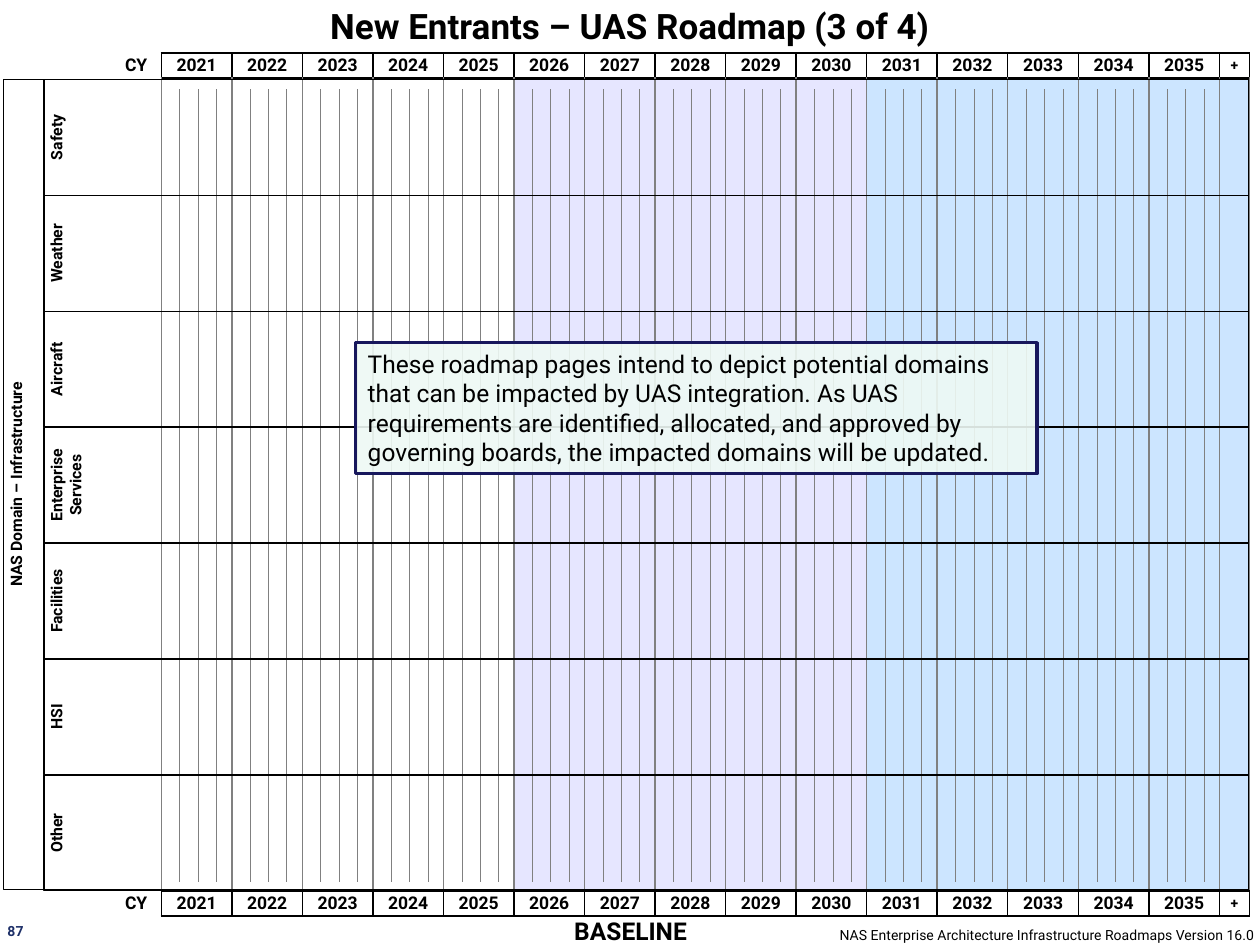
import pptx
import pptx.util
import pptx.dml.color
import pptx.enum.dml
import pptx.enum.shapes
import pptx.enum.text
import pptx.oxml.ns
import lxml.etree

Inches = pptx.util.Inches
Pt = pptx.util.Pt
RGBColor = pptx.dml.color.RGBColor
Align = pptx.enum.text.PP_ALIGN
Anchor = pptx.enum.text.MSO_ANCHOR
Kind = pptx.enum.shapes.MSO_SHAPE
qn = pptx.oxml.ns.qn

BLACK = RGBColor(0x00, 0x00, 0x00)
WHITE = RGBColor(0xFF, 0xFF, 0xFF)
GREY = RGBColor(0x80, 0x80, 0x80)
LILAC = RGBColor(0xE6, 0xE6, 0xFF)
SKY = RGBColor(0xCC, 0xE5, 0xFF)
BLUE = RGBColor(0x1D, 0x2F, 0x68)
NAVY = RGBColor(0x17, 0x17, 0x5C)
MINT = RGBColor(0xEE, 0xF9, 0xF4)


def write(frame, text, box=None, size=10, bold=True, color=BLACK,
          align=Align.CENTER, anchor=Anchor.MIDDLE, inset=(0, 0, 0, 0)):
    box = box or frame
    box.margin_left, box.margin_top, box.margin_right, box.margin_bottom = map(Inches, inset)
    box.vertical_anchor = anchor
    para = frame.paragraphs[0]
    para.alignment = align
    run = para.add_run()
    run.text = text
    run.font.name = "Roboto"
    run.font.size = Pt(size)
    run.font.bold = bold
    run.font.color.rgb = color


def edge(cell, **sides):
    props = cell._tc.get_or_add_tcPr()
    for side in "LRTB":
        line = lxml.etree.SubElement(props, qn("a:ln" + side), w=str(Pt(1)))
        if side in sides:
            fill = lxml.etree.SubElement(line, qn("a:solidFill"))
            lxml.etree.SubElement(fill, qn("a:srgbClr"), val=str(sides[side]))
        else:
            lxml.etree.SubElement(line, qn("a:noFill"))


deck = pptx.Presentation()
deck.slide_width = Inches(10)
deck.slide_height = Inches(7.5)
slide = deck.slides.add_slide(deck.slide_layouts[6])
shapes = slide.shapes

labels = [
    ("BASELINE", (4.23, 7.27, 1.55, 0.24), dict(size=14)),
    ("NAS Enterprise Architecture Infrastructure Roadmaps Version 16.0",
     (6.3, 7.35, 3.68, 0.13),
     dict(size=8, bold=False, align=Align.RIGHT, anchor=Anchor.TOP, inset=(0.02, 0, 0.02, 0))),
    ("New Entrants – UAS Roadmap (3 of 4)", (0, 0, 10, 0.4),
     dict(size=20, inset=(0.1, 0.05, 0.1, 0.05))),
    ("87", (0.06, 7.32, 0.14, 0.13),
     dict(size=8, color=BLUE, align=Align.LEFT, anchor=Anchor.TOP)),
]
for text, place, style in labels:
    frame = shapes.add_textbox(*map(Inches, place)).text_frame
    frame.word_wrap = text != "87"
    write(frame, text, **style)

heads = ["CY"] + [str(year) for year in range(2021, 2036)] + ["+"]
widths = [1.08] + [0.56] * 15 + [0.23]
tints = [None] * 6 + [LILAC] * 5 + [SKY] * 6
table = shapes.add_table(3, 17, Inches(0.2), Inches(0.42), Inches(9.71), Inches(6.85)).table
table.first_row = False
table.horz_banding = False
for row, height in zip(table.rows, (0.2, 6.45, 0.2)):
    row.height = Inches(height)
for col, (head, width, tint) in enumerate(zip(heads, widths, tints)):
    table.columns[col].width = Inches(width)
    for row in (0, 2):
        cell = table.cell(row, col)
        if col == 0:
            edge(cell, R=BLACK)
        else:
            edge(cell, L=BLACK, R=BLACK, T=BLACK, B=BLACK)
        cell.fill.solid()
        cell.fill.fore_color.rgb = WHITE
        write(cell.text_frame, head, box=cell, size=8 if head == "+" else 10,
              inset=(0.68 if col == 0 else 0, 0, 0, 0))
    cell = table.cell(1, col)
    if col == 0:
        edge(cell, R=GREY)
    else:
        edge(cell, L=GREY, R=GREY, T=BLACK, B=BLACK)
    if tint:
        cell.fill.solid()
        cell.fill.fore_color.rgb = tint
    else:
        cell.fill.background()

for year in range(15):
    for part in (1, 2, 3):
        x = Inches(1.28 + 0.56 * year + 0.145 * part)
        line = shapes.add_connector(pptx.enum.shapes.MSO_CONNECTOR.STRAIGHT,
                                    x, Inches(0.71), x, Inches(6.99))
        line.line.color.rgb = GREY
        line.line.width = Pt(0.25)
        line.line.dash_style = pptx.enum.dml.MSO_LINE.ROUND_DOT
        lxml.etree.SubElement(line._element.spPr, qn("a:effectLst"))

names = ["Safety", "Weather", "Aircraft", "Enterprise Services", "Facilities", "HSI", "Other"]
bands = [("NAS Domain – Infrastructure", 0.03, 0.63, 9.88, 6.43)]
bands += [(name, 0.35, 0.63 + 0.92 * i, 9.56, 0.92) for i, name in enumerate(names)]
for name, *place in bands:
    band = shapes.add_shape(Kind.RECTANGLE, *map(Inches, place))
    band.shadow.inherit = False
    band.fill.background()
    band.line.color.rgb = BLACK
    band.line.width = Pt(0.75)
    frame = band.text_frame
    frame.word_wrap = True
    frame._txBody.bodyPr.set("vert", "vert270")
    write(frame, name, size=9, anchor=Anchor.TOP, inset=(0.02, 0.05, 0.02, 0.05))

note = shapes.add_shape(Kind.RECTANGLE, Inches(2.82), Inches(2.72), Inches(5.41), Inches(1.04))
note.shadow.inherit = False
note.fill.solid()
note.fill.fore_color.rgb = MINT
tone = note._element.spPr.find(qn("a:solidFill")).find(qn("a:srgbClr"))
lxml.etree.SubElement(tone, qn("a:alpha"), val="90000")
note.line.color.rgb = NAVY
note.line.width = Pt(2)
note.text_frame.word_wrap = True
write(note.text_frame,
      "These roadmap pages intend to depict potential domains that can be impacted by "
      "UAS integration. As UAS requirements are identified, allocated, and approved by "
      "governing boards, the impacted domains will be updated.",
      size=14, bold=False, align=Align.LEFT, anchor=Anchor.TOP, inset=(0.1, 0.05, 0.1, 0.05))

deck.save("out.pptx")
